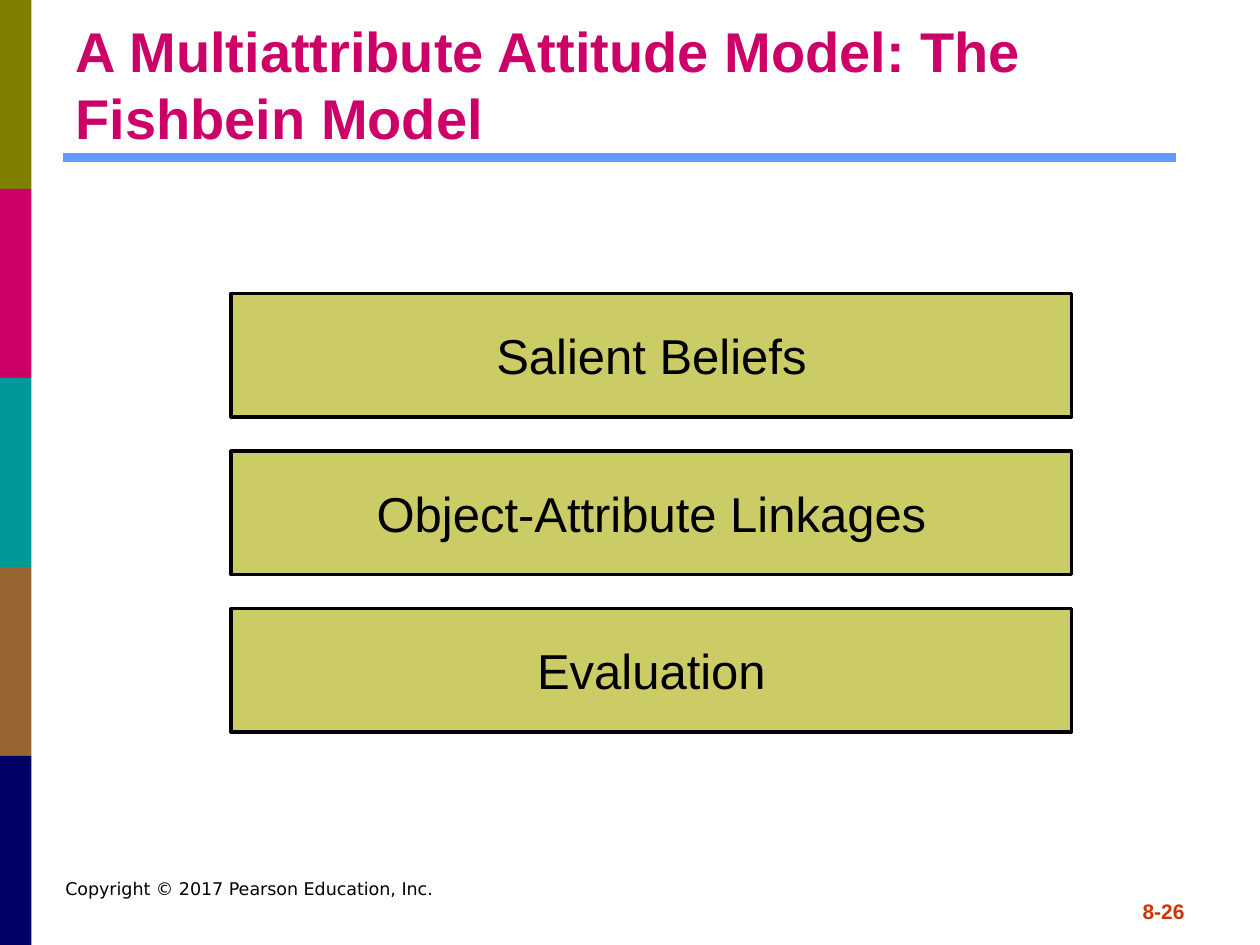
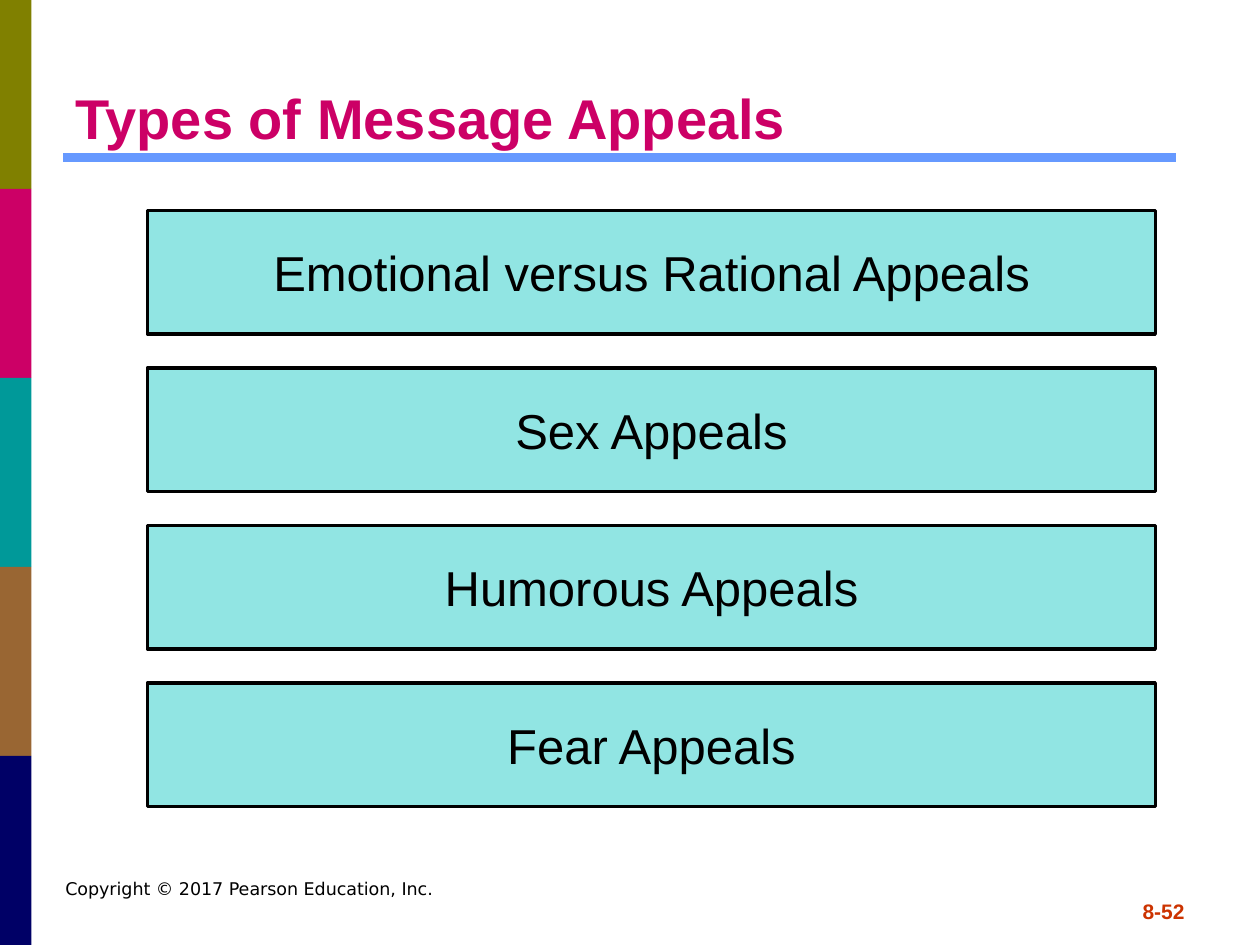
from pptx import Presentation
from pptx.dml.color import RGBColor
from pptx.enum.shapes import MSO_CONNECTOR, MSO_SHAPE
from pptx.enum.text import MSO_ANCHOR, MSO_AUTO_SIZE, PP_ALIGN
from pptx.oxml.ns import qn
from pptx.util import Inches, Pt
from lxml.etree import SubElement

BAND_COLOURS = ["808000", "CC0066", "009999", "996633", "000066"]
BAND_HEIGHT = 1.5
TITLE_COLOUR = "CC0066"
RULE_COLOUR = "6699FF"
NUMBER_COLOUR = "CC3300"
BLACK = "000000"
COPYRIGHT = "Copyright © 2017 Pearson Education, Inc."
BOX_HEIGHT = 0.98
BOX_PITCH = 1.25
BOX_CENTRE = 5.17


def colour(value):
    return RGBColor.from_string(value)


class Deck:
    def __init__(self):
        self.presentation = Presentation()
        self.presentation.slide_width = Inches(10)
        self.presentation.slide_height = Inches(7.5)
        self.slide = None

    def add_slide(self, title, number):
        """Start a slide with the shared rule, bands, footer and title."""
        layout = self.presentation.slide_layouts[5]
        self.slide = self.presentation.slides.add_slide(layout)
        self.rule(0.5, 9.33, 1.25)
        for index, fill in enumerate(BAND_COLOURS):
            self.rectangle(0, index * BAND_HEIGHT, 0.25, BAND_HEIGHT, fill)
        self.text_box(7.17, 7.08, 2.33, 0.25, number, 12, NUMBER_COLOUR,
                      bold=True, align=PP_ALIGN.RIGHT)
        self.text_box(0.42, 6.92, 6.33, 0.58, COPYRIGHT, 10, BLACK,
                      font="DejaVu Sans")
        self.title(title)

    def add_text(self, frame, text, size, text_colour, font="Arial",
                 bold=False, align=PP_ALIGN.LEFT):
        frame.word_wrap = True
        paragraph = frame.paragraphs[0]
        paragraph.alignment = align
        run = paragraph.add_run()
        run.text = text
        run.font.name = font
        run.font.size = Pt(size)
        run.font.bold = bold
        run.font.color.rgb = colour(text_colour)

    def title(self, text):
        shape = self.slide.shapes.title
        shape.left, shape.top = Inches(0.5), Inches(0.3)
        shape.width, shape.height = Inches(9), Inches(0.95)
        frame = shape.text_frame
        frame.auto_size = MSO_AUTO_SIZE.NONE
        frame.vertical_anchor = MSO_ANCHOR.BOTTOM
        self.add_text(frame, text, 32, TITLE_COLOUR, bold=True)

    def text_box(self, left, top, width, height, text, size, text_colour,
                 **style):
        shape = self.slide.shapes.add_textbox(
            Inches(left), Inches(top), Inches(width), Inches(height))
        self.add_text(shape.text_frame, text, size, text_colour, **style)

    def rule(self, left, right, top):
        line = self.slide.shapes.add_connector(
            MSO_CONNECTOR.STRAIGHT,
            Inches(left), Inches(top), Inches(right), Inches(top))
        line.line.color.rgb = colour(RULE_COLOUR)
        line.line.width = Pt(5)
        SubElement(line._element.spPr, qn("a:effectLst"))

    def rectangle(self, left, top, width, height, fill):
        shape = self.slide.shapes.add_shape(
            MSO_SHAPE.RECTANGLE,
            Inches(left), Inches(top), Inches(width), Inches(height))
        shape.shadow.inherit = False
        shape.fill.solid()
        shape.fill.fore_color.rgb = colour(fill)
        shape.line.fill.background()
        return shape

    def box_stack(self, labels, top, width, fill):
        """Stack outlined, labelled boxes at an even pitch."""
        left = BOX_CENTRE - width / 2
        for index, label in enumerate(labels):
            box = self.rectangle(left, top + index * BOX_PITCH, width,
                                 BOX_HEIGHT, fill)
            box.line.color.rgb = colour(BLACK)
            box.line.width = Pt(2)
            frame = box.text_frame
            frame.margin_top = frame.margin_bottom = Inches(0.25)
            frame.auto_size = MSO_AUTO_SIZE.SHAPE_TO_FIT_TEXT
            self.add_text(frame, label, 28, BLACK, align=PP_ALIGN.CENTER)


def main():
    deck = Deck()

    deck.add_slide("A Multiattribute Attitude Model: The Fishbein Model", "8-26")
    deck.box_stack(["Salient Beliefs", "Object-Attribute Linkages", "Evaluation"],
                   top=2.33, width=6.67, fill="CCCC66")

    deck.add_slide("Types of Message Appeals", "8-52")
    deck.box_stack(["Emotional versus Rational Appeals", "Sex Appeals",
                    "Humorous Appeals", "Fear Appeals"],
                   top=1.67, width=8, fill="91E5E3")

    deck.presentation.save("out.pptx")


if __name__ == "__main__":
    main()
